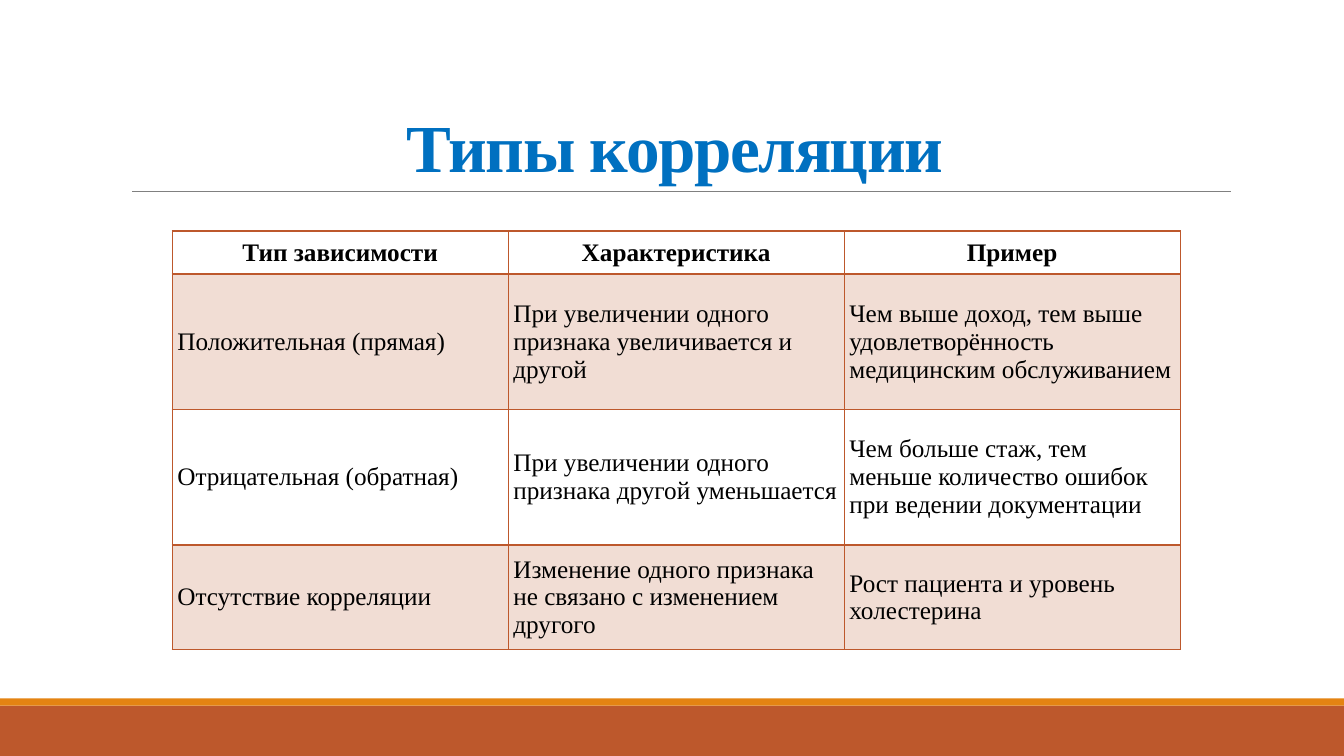
"""Build the slide on types of correlation."""
from pptx import Presentation
from pptx.dml.color import RGBColor
from pptx.enum.shapes import MSO_CONNECTOR, MSO_SHAPE
from pptx.enum.text import MSO_ANCHOR, PP_ALIGN
from pptx.oxml import parse_xml
from pptx.oxml.ns import nsdecls, qn
from pptx.util import Emu, Pt
from lxml.etree import SubElement

PX = 9525
FONT = "Times New Roman"
INSET = 5
COLORS = {
    "rust": "BD582C",
    "orange": "E48312",
    "gray": "808080",
    "title": "0070C0",
    "text": "000000",
}
COL_WIDTH = 320
ROW_HEIGHTS = [41, 129, 129, 100]
ROWS = [
    ["Тип зависимости", "Характеристика", "Пример"],
    [
        "Положительная (прямая)",
        "При увеличении одного признака увеличивается и другой",
        "Чем выше доход, тем выше удовлетворённость медицинским обслуживанием",
    ],
    [
        "Отрицательная (обратная)",
        "При увеличении одного признака другой уменьшается",
        "Чем больше стаж, тем меньше количество ошибок при ведении документации",
    ],
    [
        "Отсутствие корреляции",
        "Изменение одного признака не связано с изменением другого",
        "Рост пациента и уровень холестерина",
    ],
]


def px(*values):
    return [Emu(v * PX) for v in values]


def color(name):
    return RGBColor.from_string(COLORS[name])


def add_run(p, text, size, name, bold):
    r = p.add_run()
    r.text = text
    r.font.name = FONT
    r.font.size = Pt(size)
    r.font.bold = bold
    r.font.color.rgb = color(name)
    return r


def set_insets(target):
    target.margin_left, target.margin_top, target.margin_right, target.margin_bottom = px(*[INSET] * 4)


def add_bar(s, box, name):
    sp = s.shapes.add_shape(MSO_SHAPE.RECTANGLE, *px(*box))
    sp.shadow.inherit = False
    sp.fill.solid()
    sp.fill.fore_color.rgb = color(name)
    sp.line.fill.background()


def add_rule(s, ends):
    line = s.shapes.add_connector(MSO_CONNECTOR.STRAIGHT, *px(*ends))
    line.line.color.rgb = color("gray")
    line.line.width = Pt(0.5)
    SubElement(line._element.spPr, qn("a:effectLst"))


def set_title(s, box, text):
    sp = s.shapes.title
    sp.left, sp.top, sp.width, sp.height = px(*box)
    tf = sp.text_frame
    tf.word_wrap = True
    tf.vertical_anchor = MSO_ANCHOR.BOTTOM
    set_insets(tf)
    p = tf.paragraphs[0]
    p.alignment = PP_ALIGN.CENTER
    p.line_spacing = 0.85
    r = add_run(p, text, 48, "title", True)
    r.font._element.set("spc", "-100")


def set_borders(cell, widths):
    tc_pr = cell._tc.get_or_add_tcPr()
    for i, (side, width) in enumerate(widths.items()):
        tc_pr.insert(i, parse_xml(
            f'<a:ln{side} {nsdecls("a")} w="{Pt(width)}"><a:solidFill>'
            f'<a:srgbClr val="{COLORS["rust"]}"/></a:solidFill></a:ln{side}>'))


def set_fill(cell, shaded):
    if not shaded:
        cell.fill.background()
        return
    cell.fill.solid()
    cell.fill.fore_color.rgb = color("rust")
    rgb = cell._tc.tcPr.find(f'{qn("a:solidFill")}/{qn("a:srgbClr")}')
    SubElement(rgb, qn("a:alpha")).set("val", "20000")


def fill_cell(cell, text, row):
    header = row == 0
    cell.vertical_anchor = MSO_ANCHOR.MIDDLE
    set_insets(cell)
    p = cell.text_frame.paragraphs[0]
    p.alignment = PP_ALIGN.CENTER if header else PP_ALIGN.LEFT
    add_run(p, text, 18, "text", header)
    set_fill(cell, row % 2 == 1)
    set_borders(cell, {"L": 1, "R": 1, "T": 2 if row == 1 else 1, "B": 2 if header else 1})


def add_types_table(s, left, top):
    cols = len(ROWS[0])
    box = px(left, top, COL_WIDTH * cols, sum(ROW_HEIGHTS))
    table = s.shapes.add_table(len(ROWS), cols, *box).table
    table.horz_banding = False
    table.first_row = False
    for col in table.columns:
        col.width = Emu(COL_WIDTH * PX)
    for i, (height, texts) in enumerate(zip(ROW_HEIGHTS, ROWS)):
        table.rows[i].height = Emu(height * PX)
        for j, text in enumerate(texts):
            fill_cell(table.cell(i, j), text, i)


def main():
    prs = Presentation()
    prs.slide_width, prs.slide_height = px(1280, 720)
    s = prs.slides.add_slide(prs.slide_layouts[5])
    add_bar(s, (0, 672, 1280, 48), "rust")
    add_bar(s, (0, 665, 1280, 7), "orange")
    add_rule(s, (126, 182, 1172, 182))
    set_title(s, (115, 30, 1056, 152), "Типы корреляции")
    add_types_table(s, 164, 220)
    prs.save("out.pptx")


if __name__ == "__main__":
    main()
